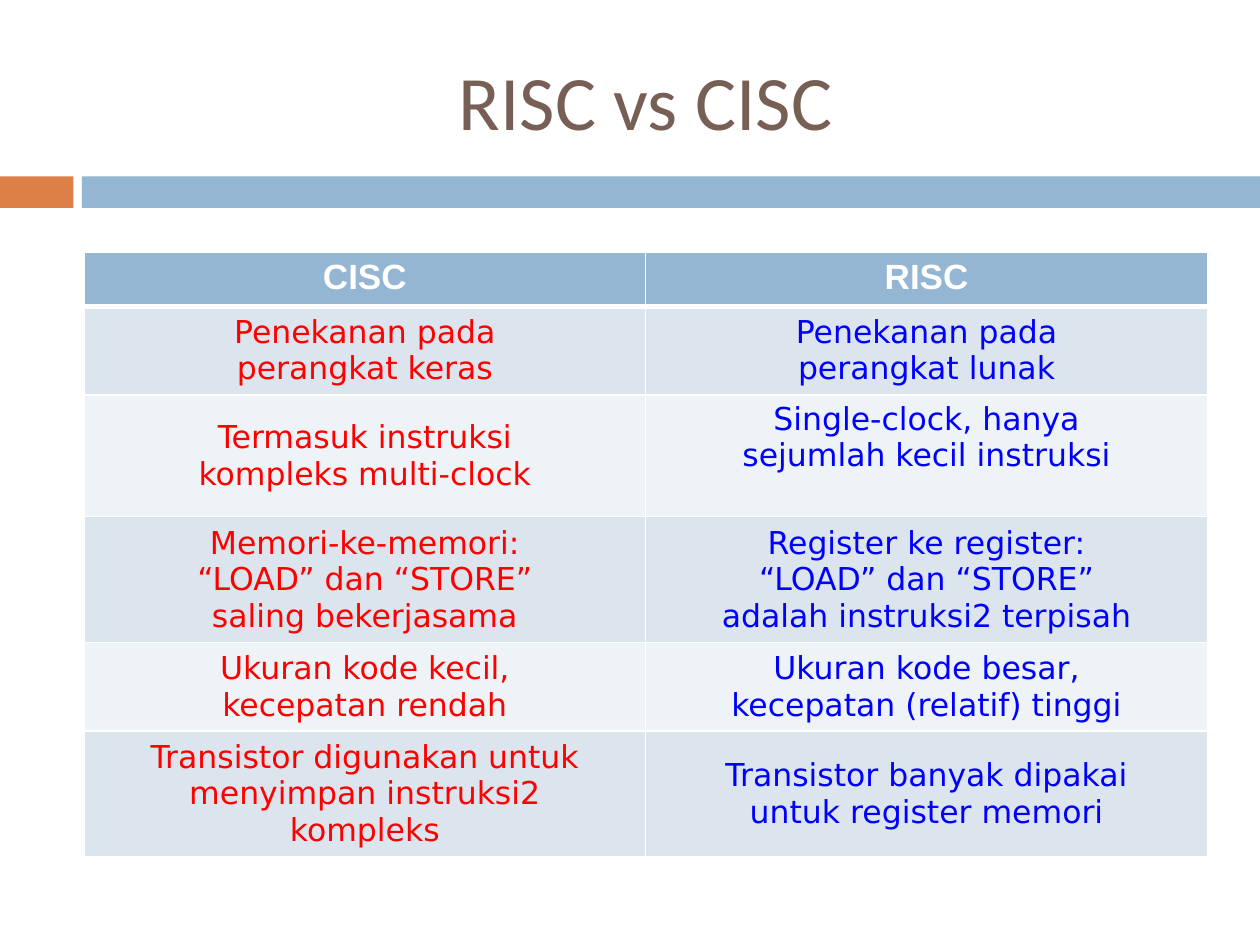
from lxml.etree import SubElement
from pptx import Presentation
from pptx.dml.color import RGBColor
from pptx.enum.shapes import MSO_SHAPE
from pptx.enum.text import MSO_ANCHOR, PP_ALIGN
from pptx.oxml.ns import qn
from pptx.util import Inches, Pt

COLORS = {
    "orange": "DD8047", "blue": "94B6D2", "brown": "775F55",
    "white": "FFFFFF", "dark_band": "DCE5EE", "light_band": "EEF3F7",
    "cisc": "FF0000", "risc": "0000FF",
}
GRID_COLUMNS, GRID_ROWS = 120, 90
HEADERS = ["CISC", "RISC"]
COMPARISONS = [
    ("Penekanan pada\vperangkat keras", "Penekanan pada\vperangkat lunak"),
    ("Termasuk instruksi\vkompleks multi-clock",
     "Single-clock, hanya\vsejumlah kecil instruksi"),
    ("Memori-ke-memori:\v“LOAD” dan “STORE”\vsaling bekerjasama",
     "Register ke register:\v“LOAD” dan “STORE”\vadalah instruksi2 terpisah"),
    ("Ukuran kode kecil,\vkecepatan rendah",
     "Ukuran kode besar,\vkecepatan (relatif) tinggi"),
    ("Transistor digunakan untuk\vmenyimpan instruksi2\vkompleks",
     "Transistor banyak dipakai\vuntuk register memori"),
]
ROW_HEIGHTS = [4.8, 8.2, 11.6, 11.6, 8.2, 11.6]


class SlideBuilder:
    def __init__(self, presentation):
        self.column = presentation.slide_width / GRID_COLUMNS
        self.row = presentation.slide_height / GRID_ROWS
        self.slide = presentation.slides.add_slide(presentation.slide_layouts[6])

    def box(self, left, top, width, height):
        return (int(left * self.column), int(top * self.row),
                int(width * self.column), int(height * self.row))

    def color(self, name):
        return RGBColor.from_string(COLORS[name])

    def set_text(self, text_frame, text, font, size, color, bold=False):
        text_frame.text = text
        paragraph = text_frame.paragraphs[0]
        paragraph.alignment = PP_ALIGN.CENTER
        for run in paragraph.runs:
            run.font.name = font
            run.font.size = Pt(size)
            run.font.bold = bold
            run.font.color.rgb = self.color(color)

    def bar(self, box, color):
        shape = self.slide.shapes.add_shape(MSO_SHAPE.RECTANGLE, *self.box(*box))
        shape.shadow.inherit = False
        shape.fill.solid()
        shape.fill.fore_color.rgb = self.color(color)
        shape.line.fill.background()

    def title(self, box, text):
        text_frame = self.slide.shapes.add_textbox(*self.box(*box)).text_frame
        text_frame.word_wrap = True
        text_frame.vertical_anchor = MSO_ANCHOR.MIDDLE
        self.set_text(text_frame, text, "Calibri", 44, "brown")

    def borders(self, cell, bottom_width, top_width):
        properties = cell._tc.get_or_add_tcPr()
        widths = {"lnL": 1, "lnR": 1, "lnT": top_width, "lnB": bottom_width}
        for side, width in widths.items():
            line = SubElement(properties, qn(f"a:{side}"), w=str(Pt(width)))
            fill = SubElement(line, qn("a:solidFill"))
            SubElement(fill, qn("a:srgbClr"), val=COLORS["white"])

    def cell(self, cell, fill, bottom_width=1, top_width=1):
        self.borders(cell, bottom_width, top_width)
        cell.fill.solid()
        cell.fill.fore_color.rgb = self.color(fill)

    def table(self, left, top, width, headers, rows, heights):
        table = self.slide.shapes.add_table(
            len(heights), len(headers),
            *self.box(left, top, width, sum(heights))).table
        for table_row, height in zip(table.rows, heights):
            table_row.height = int(height * self.row)
        for column, header in enumerate(headers):
            cell = table.cell(0, column)
            self.cell(cell, "blue", bottom_width=3)
            self.set_text(cell.text_frame, header, "Arial", 20, "white", bold=True)
        for index, texts in enumerate(rows, start=1):
            band = "dark_band" if index % 2 else "light_band"
            for column, text in enumerate(texts):
                cell = table.cell(index, column)
                self.cell(cell, band, top_width=3 if index == 1 else 1)
                cell.vertical_anchor = MSO_ANCHOR.MIDDLE
                self.set_text(cell.text_frame, text, "DejaVu Sans", 18,
                              headers[column].lower())
        return table


def main():
    presentation = Presentation()
    presentation.slide_width = Inches(10)
    presentation.slide_height = Inches(7.5)
    builder = SlideBuilder(presentation)
    builder.bar((0, 16.8, 7, 3), "orange")
    builder.bar((7.8, 16.8, 112.2, 3), "blue")
    builder.title((8, 3, 107, 13), "RISC vs CISC")
    table = builder.table(8, 24, 107, HEADERS, COMPARISONS, ROW_HEIGHTS)
    table.cell(2, 1).vertical_anchor = MSO_ANCHOR.TOP
    presentation.save("out.pptx")


if __name__ == "__main__":
    main()
